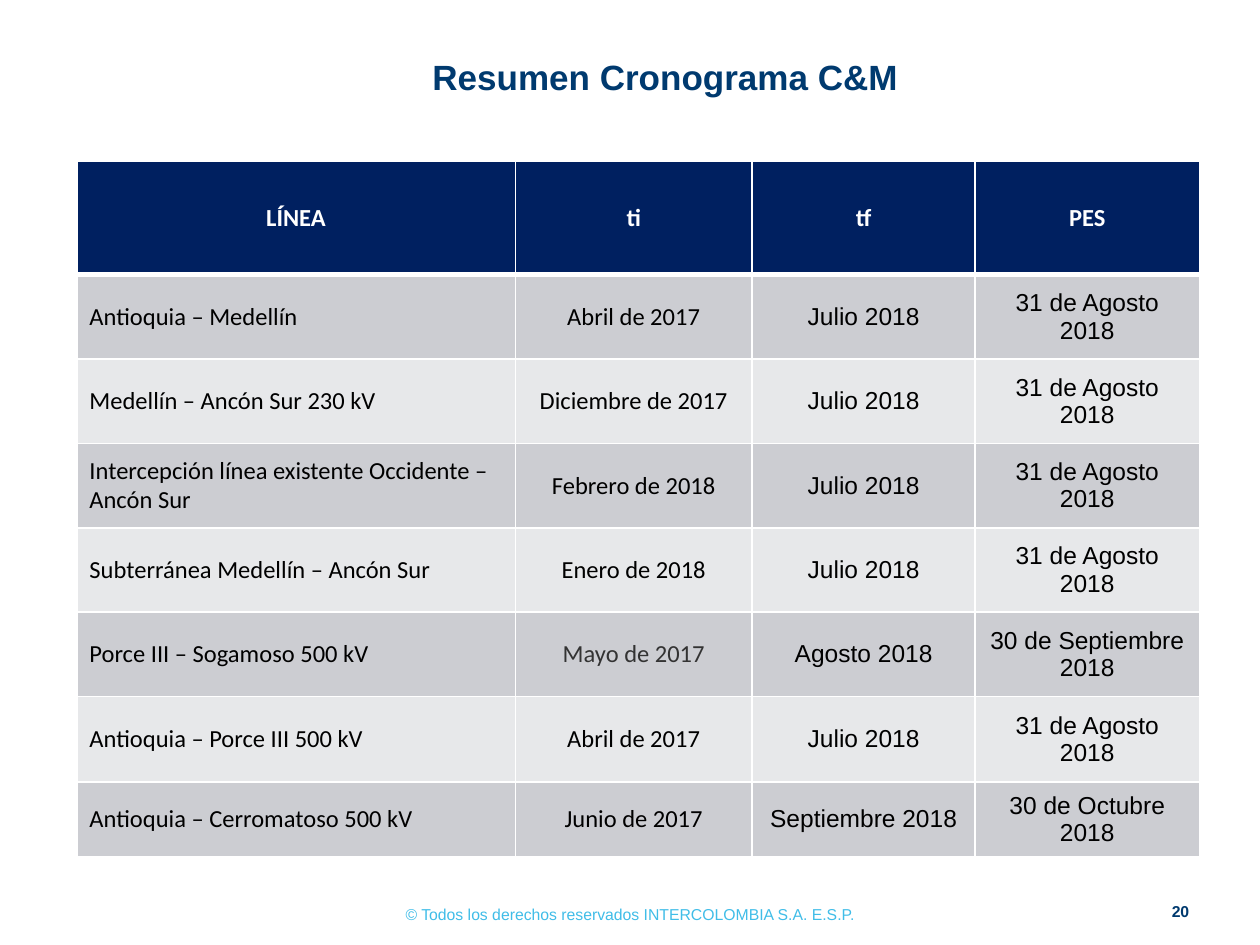
"""Build the C&M schedule summary slide with its table of transmission lines."""
from lxml import etree
from pptx import Presentation
from pptx import util as u
from pptx.dml.color import RGBColor
from pptx.enum import text
from pptx.oxml import ns

PX = 9144
COLORS = {"navy": "003A6F", "sky": "40BDE8", "header": "002060", "dark": "CCCDD2",
          "light": "E7E8EA", "white": "FFFFFF", "black": "000000", "gray": "333333"}
COLS = [348, 188, 177, 178]
ROWS = [90, 67, 67, 67, 67, 67, 68, 59]
DATA = [
    ("LÍNEA", "ti", "tf", "PES"),
    ("Antioquia – Medellín", "Abril de 2017", "Julio 2018", "31 de Agosto 2018"),
    ("Medellín – Ancón Sur 230 kV", "Diciembre de 2017", "Julio 2018", "31 de Agosto 2018"),
    ("Intercepción línea existente Occidente – Ancón Sur", "Febrero de 2018", "Julio 2018",
     "31 de Agosto 2018"),
    ("Subterránea Medellín – Ancón Sur", "Enero de 2018", "Julio 2018", "31 de Agosto 2018"),
    ("Porce III – Sogamoso 500 kV", "Mayo de 2017", "Agosto 2018", "30 de Septiembre 2018"),
    ("Antioquia – Porce III 500 kV", "Abril de 2017", "Julio 2018", "31 de Agosto 2018"),
    ("Antioquia – Cerromatoso 500 kV", "Junio de 2017", "Septiembre 2018", "30 de Octubre 2018"),
]


def write(tf, content, size=14, font="Arial", color="black", bold=False, align="CENTER"):
    tf.word_wrap = True
    p = tf.paragraphs[0]
    p.alignment = getattr(text.PP_ALIGN, align)
    r = p.add_run()
    r.text = content
    r.font.size = u.Pt(size)
    r.font.name = font
    r.font.bold = bold
    r.font.color.rgb = RGBColor.from_string(COLORS[color])


def set_border(cell, side, width):
    ln = etree.SubElement(cell._tc.get_or_add_tcPr(), ns.qn(f"a:ln{side}"), w=str(u.Pt(width)))
    fill = etree.SubElement(ln, ns.qn("a:solidFill"))
    etree.SubElement(fill, ns.qn("a:srgbClr"), val=COLORS["white"])


prs = Presentation()
prs.slide_width, prs.slide_height = 1000 * PX, 750 * PX
s = prs.slides.add_slide(prs.slide_layouts[5])

title = s.shapes.title
title.left, title.top, title.width, title.height = (n * PX for n in (173, 34, 710, 54))
title.text_frame.vertical_anchor = text.MSO_ANCHOR.MIDDLE
write(title.text_frame, "Resumen Cronograma C&M", size=20, color="navy", bold=True)

table = s.shapes.add_table(len(ROWS), len(COLS), *(n * PX for n in (61, 128, sum(COLS), sum(ROWS)))).table
for col, width in zip(table.columns, COLS):
    col.width = width * PX
for i, (row, height, values) in enumerate(zip(table.rows, ROWS, DATA)):
    row.height = height * PX
    header = i == 0
    fill = "header" if header else "dark" if i % 2 else "light"
    for j, (cell, value) in enumerate(zip(row.cells, values)):
        for side in "LRTB":
            thick = (header and side == "B") or (i == 1 and side == "T")
            set_border(cell, side, 3 if thick else 1)
        cell.fill.solid()
        cell.fill.fore_color.rgb = RGBColor.from_string(COLORS[fill])
        cell.vertical_anchor = text.MSO_ANCHOR.MIDDLE
        write(cell.text_frame, value, bold=header,
              font="Calibri" if header or j < 2 else "Arial",
              color="white" if header else "gray" if value == "Mayo de 2017" else "black",
              align="LEFT" if j == 0 and not header else "CENTER")

footer = s.shapes.add_textbox(*(n * PX for n in (272, 713, 456, 25)))
write(footer.text_frame, "© Todos los derechos reservados INTERCOLOMBIA S.A. E.S.P.", size=9, color="sky")

number = s.shapes.add_textbox(*(n * PX for n in (912, 710, 40, 26)))
number.text_frame.vertical_anchor = text.MSO_ANCHOR.BOTTOM
number.text_frame.margin_right = 0
write(number.text_frame, "20", size=9, color="navy", bold=True)

prs.save("out.pptx")
